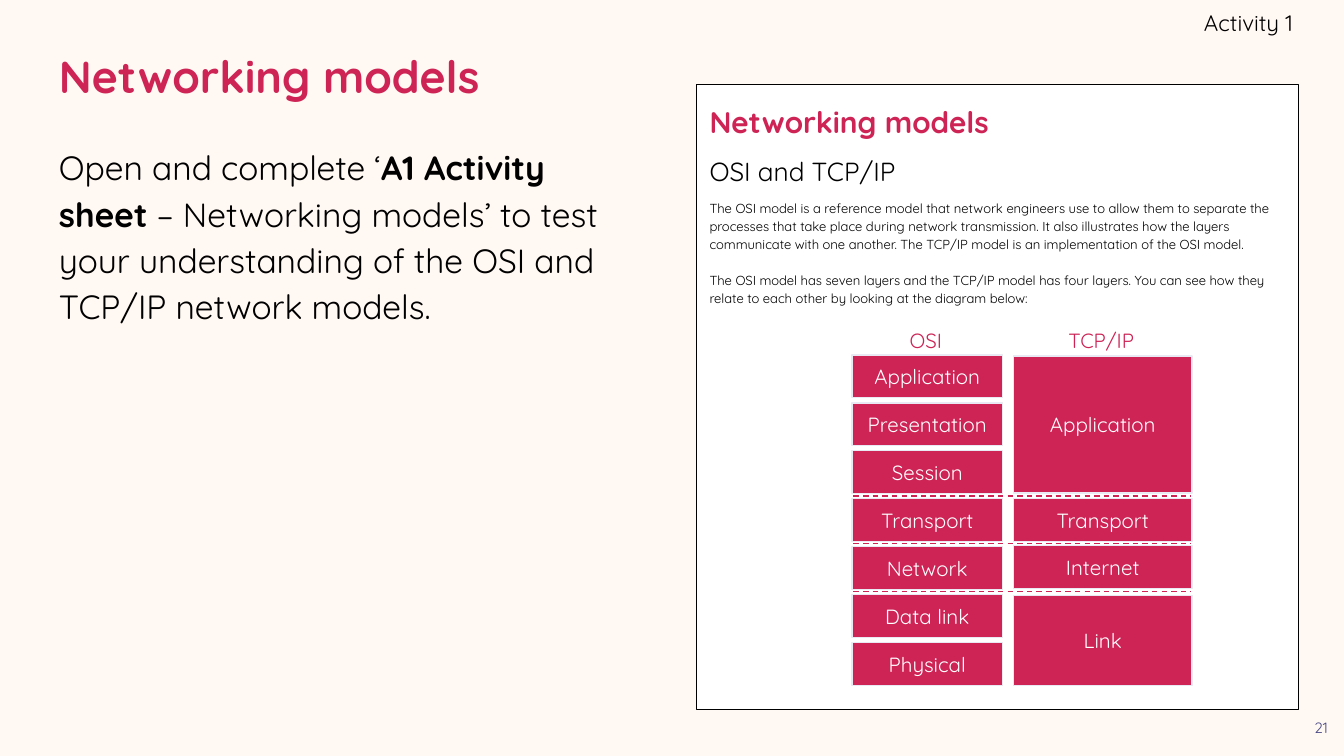
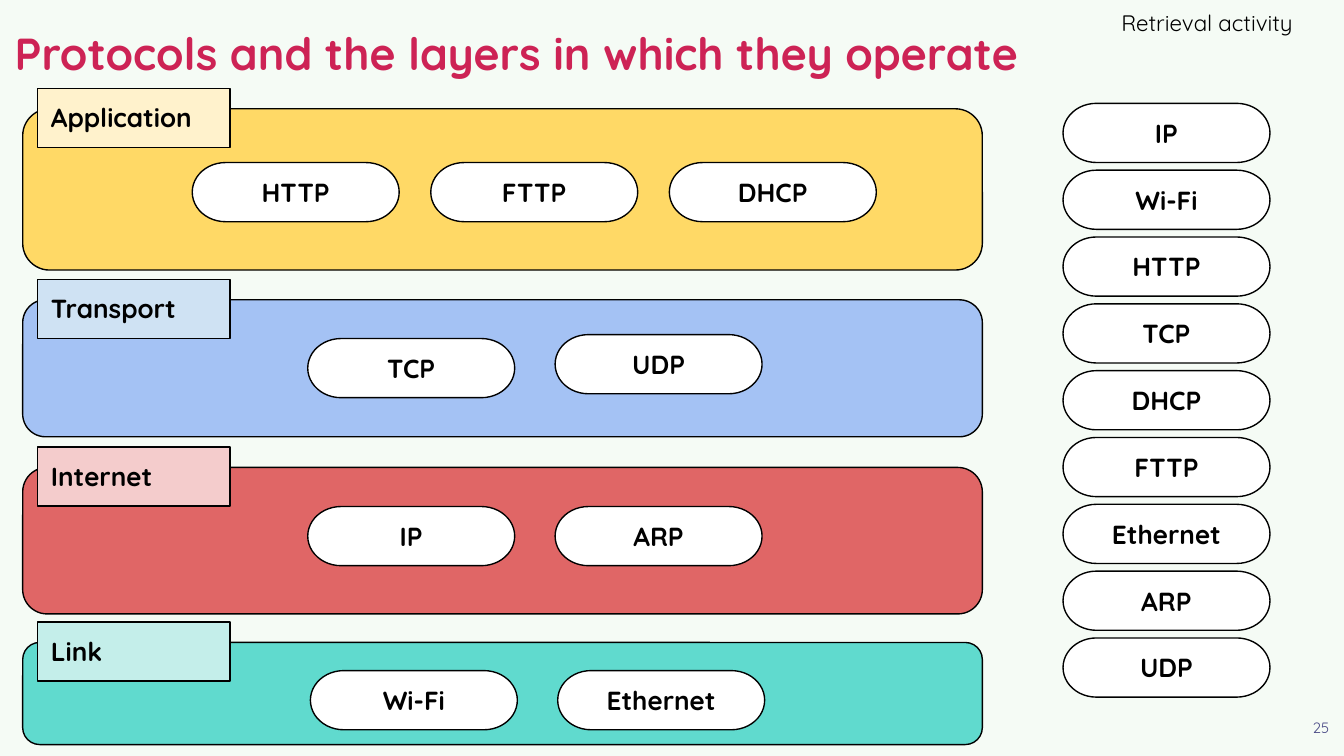
"""Builds two lesson slides on networking models and protocol layers."""
from lxml.etree import SubElement
from pptx import Presentation
from pptx.dml.color import RGBColor
from pptx.enum.dml import MSO_LINE
from pptx.enum.shapes import MSO_CONNECTOR, MSO_SHAPE
from pptx.enum.text import MSO_ANCHOR, PP_ALIGN
from pptx.oxml.ns import qn
from pptx.util import Pt

FONT = "Quicksand"
INSET = Pt(7.2)
CRIMSON = RGBColor(0xCD, 0x23, 0x55)
BLACK = RGBColor(0x00, 0x00, 0x00)
WHITE = RGBColor(0xFF, 0xFF, 0xFF)
INDIGO = RGBColor(0x49, 0x49, 0x85)
PALE_GREY = RGBColor(0xE9, 0xE9, 0xF3)
CREAM = RGBColor(0xFF, 0xF8, 0xF3)
MINT = RGBColor(0xF5, 0xFB, 0xF5)
YELLOW = RGBColor(0xFF, 0xD9, 0x66)
PALE_YELLOW = RGBColor(0xFF, 0xF2, 0xCC)
BLUE = RGBColor(0xA4, 0xC2, 0xF4)
PALE_BLUE = RGBColor(0xCF, 0xE2, 0xF3)
RED = RGBColor(0xE0, 0x66, 0x66)
PALE_RED = RGBColor(0xF4, 0xCC, 0xCC)
TEAL = RGBColor(0x60, 0xDA, 0xCE)
PALE_TEAL = RGBColor(0xC4, 0xEE, 0xEA)


def add_box(slide, kind, left, top, width, height, fill=None, outline=BLACK, anchor=MSO_ANCHOR.MIDDLE):
    """Add a text box, or a filled and outlined shape when a kind is given."""
    place = Pt(left), Pt(top), Pt(width), Pt(height)
    if kind is None:
        shape = slide.shapes.add_textbox(*place)
    else:
        shape = slide.shapes.add_shape(kind, *place)
        shape.shadow.inherit = False
        shape.fill.solid()
        shape.fill.fore_color.rgb = fill
        shape.line.color.rgb = outline
        shape.line.width = Pt(0.75)
    frame = shape.text_frame
    frame.word_wrap = True
    frame.vertical_anchor = anchor
    frame.margin_left = frame.margin_top = frame.margin_right = frame.margin_bottom = INSET
    return shape


def write(shape, runs, size, color, align=PP_ALIGN.LEFT, spacing=1, before=0):
    """Write one paragraph from (text, bold) runs."""
    frame = shape.text_frame
    paragraph = frame.add_paragraph() if frame.paragraphs[0].runs else frame.paragraphs[0]
    paragraph.alignment = align
    paragraph.line_spacing = spacing
    paragraph.space_before = Pt(before)
    for text, bold in runs:
        run = paragraph.add_run()
        run.text = text
        run.font.name = FONT
        run.font.size = Pt(size)
        run.font.bold = bold
        run.font.color.rgb = color


presentation = Presentation()
presentation.slide_width = Pt(720)
presentation.slide_height = Pt(405)

slides = []
for background, title, title_left, title_top, activity, number in [
    (CREAM, "Networking models", 24.5, 13, "Activity 1", "21"),
    (MINT, "Protocols and the layers in which they operate", 0.7, 0.7, "Retrieval activity", "25"),
]:
    slide = presentation.slides.add_slide(presentation.slide_layouts[6])
    slide.background.fill.solid()
    slide.background.fill.fore_color.rgb = background
    title_box = add_box(slide, None, title_left, title_top, 671, 54.7)
    write(title_box, [(title, True)], 24, CRIMSON)
    number_box = add_box(slide, None, 695.5, 380.2, 24.5, 24.5, anchor=MSO_ANCHOR.TOP)
    write(number_box, [(number, False)], 8, INDIGO, PP_ALIGN.CENTER)
    activity_box = add_box(slide, None, 538.6, 0, 154, 24.5)
    activity_box.text_frame.margin_right = Pt(0)
    write(activity_box, [(activity, False)], 12, BLACK, PP_ALIGN.RIGHT)
    slides.append(slide)

models_slide, protocols_slide = slides

task = add_box(models_slide, None, 24.5, 68.4, 322.6, 288, anchor=MSO_ANCHOR.TOP)
write(task, [
    ("Open and complete ‘", False),
    ("A1 Activity sheet", True),
    (" – Networking models’ to test your understanding of the OSI and TCP/IP network models.", False),
], 18, BLACK, spacing=1.15)

sheet = add_box(models_slide, MSO_SHAPE.RECTANGLE, 373, 45.4, 322.6, 334.8, WHITE, anchor=MSO_ANCHOR.TOP)
for text, bold, size, color, before in [
    ("Networking models", True, 16, CRIMSON, 0),
    ("OSI and TCP/IP", False, 14, BLACK, 6),
    ("The OSI model is a reference model that network engineers use to allow them to separate the "
     "processes that take place during network transmission. It also illustrates how the layers "
     "communicate with one another. The TCP/IP model is an implementation of the OSI model.",
     False, 7, BLACK, 6),
    ("The OSI model has seven layers and the TCP/IP model has four layers. You can see how they "
     "relate to each other by looking at the diagram below:", False, 7, BLACK, 9.7),
]:
    write(sheet, [(text, bold)], size, color, spacing=1.15, before=before)

for heading, left, width in [("OSI", 480.2, 36), ("TCP/IP", 565.2, 51)]:
    heading_box = add_box(models_slide, None, left, 166.3, width, 28, anchor=MSO_ANCHOR.TOP)
    write(heading_box, [(heading, False)], 11, CRIMSON, spacing=1.15)

osi_names = ["Application", "Presentation", "Session", "Transport", "Network", "Data link", "Physical"]
layers = [(name, 456.5, 190.1 + 25.7 * row, 80.6, 23) for row, name in enumerate(osi_names)]
layers += [
    (name, 542.9, top, 95.8, height)
    for name, top, height in [
        ("Application", 190.8, 73.4),
        ("Transport", 267.1, 23),
        ("Internet", 292.3, 23),
        ("Link", 319, 48.2),
    ]
]
for name, left, top, width, height in layers:
    layer = add_box(models_slide, MSO_SHAPE.RECTANGLE, left, top, width, height, CRIMSON, PALE_GREY)
    write(layer, [(name, False)], 11, WHITE, PP_ALIGN.CENTER)

for row in range(3):
    height = Pt(265.7 + 25.6 * row)
    divider = models_slide.shapes.add_connector(MSO_CONNECTOR.STRAIGHT, Pt(457.2), height, Pt(637.9), height)
    divider.line.color.rgb = CRIMSON
    divider.line.width = Pt(0.75)
    divider.line.dash_style = MSO_LINE.DASH
    SubElement(divider.element.spPr, qn("a:effectLst"))

bank = ["IP", "Wi-Fi", "HTTP", "TCP", "DHCP", "FTTP", "Ethernet", "ARP", "UDP"]
pills = [(name, 569.5, 55.4 + 35.8 * row) for row, name in enumerate(bank)]
for band_name, top, height, fill, label_fill, pill_left, pill_step, answers in [
    ("Application", 58.3, 86.4, YELLOW, PALE_YELLOW, 103, 127.8,
     [("HTTP", 87.1), ("FTTP", 87.1), ("DHCP", 87.1)]),
    ("Transport", 160.6, 73.4, BLUE, PALE_BLUE, 164.9, 132.5, [("TCP", 181.4), ("UDP", 179.3)]),
    ("Internet", 250.4, 78.5, RED, PALE_RED, 164.9, 132.5, [("IP", 271.4), ("ARP", 271.4)]),
    ("Link", 344.2, 54.7, TEAL, PALE_TEAL, 166.3, 132.5, [("Wi-Fi", 359.3), ("Ethernet", 359.3)]),
]:
    add_box(protocols_slide, MSO_SHAPE.ROUNDED_RECTANGLE, 12.2, top, 514.1, height, fill)
    label = add_box(protocols_slide, MSO_SHAPE.RECTANGLE, 20.2, top - 11, 103, 31.7, label_fill,
                    anchor=MSO_ANCHOR.TOP)
    write(label, [(band_name, True)], 14, BLACK)
    pills += [(name, pill_left + pill_step * column, pill_top)
              for column, (name, pill_top) in enumerate(answers)]

for name, left, top in pills:
    pill = add_box(protocols_slide, MSO_SHAPE.FLOWCHART_TERMINATOR, left, top, 110.9, 31.7, WHITE)
    write(pill, [(name, True)], 14, BLACK, PP_ALIGN.CENTER)

presentation.save("out.pptx")
